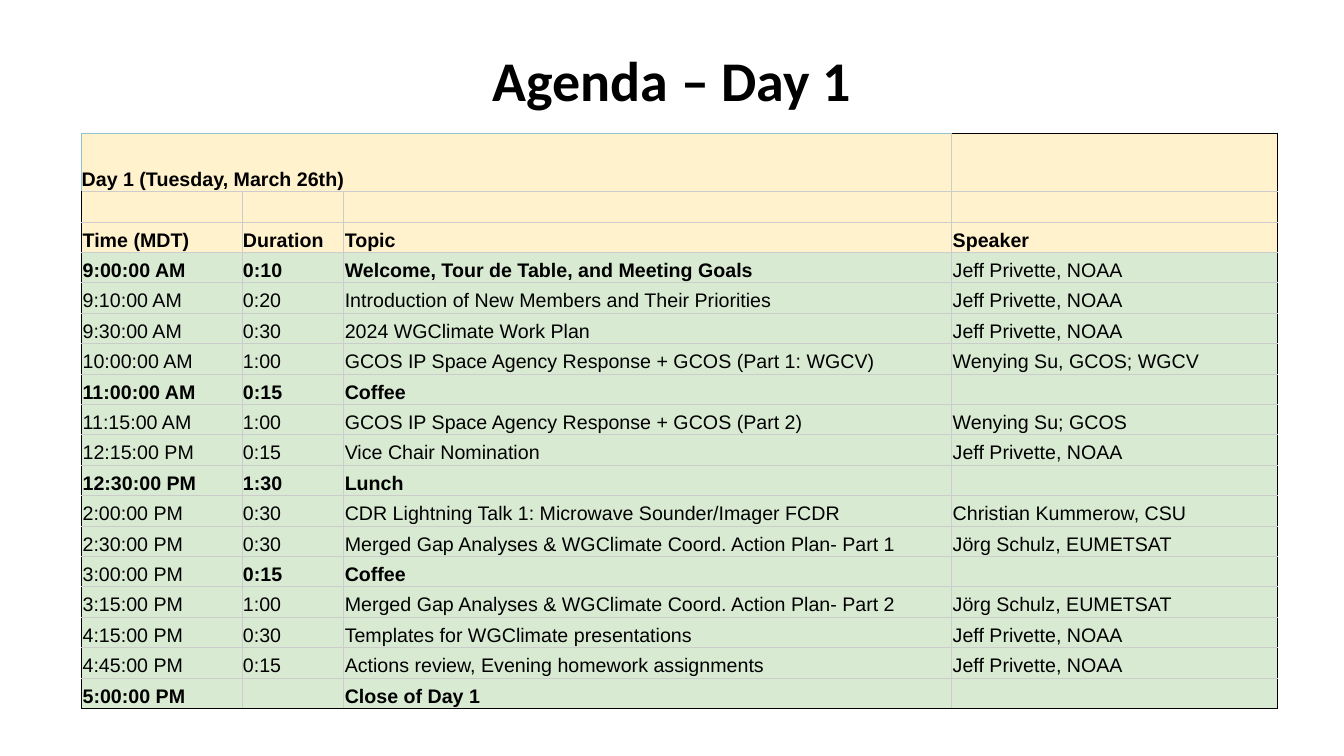
"""Build the Day 1 agenda slide with its timetable."""
from lxml import etree
from pptx import Presentation
from pptx import util as u
from pptx.dml import color
from pptx.enum import text
from pptx.oxml import ns

COLORS = {"ink": "000000", "grid": "CCCCCC", "corner": "90C4CA",
          "heading": "FFF2CC", "session": "D9EAD3"}
COLUMN_WIDTHS = (1.59, 1.01, 6.03, 3.23)
TABLE_HEIGHT, DAY_HEIGHT = 5.71, 0.58
HEADING_ROWS = 3
BOLD_TOPICS = {"Welcome, Tour de Table, and Meeting Goals", "Coffee", "Lunch", "Close of Day 1"}
PLAIN_TIMES = {"3:00:00 PM"}
AGENDA = (
    ("Day 1 (Tuesday, March 26th)", "", "", ""),
    ("", "", "", ""),
    ("Time (MDT)", "Duration", "Topic", "Speaker"),
    ("9:00:00 AM", "0:10", "Welcome, Tour de Table, and Meeting Goals", "Jeff Privette, NOAA"),
    ("9:10:00 AM", "0:20", "Introduction of New Members and Their Priorities", "Jeff Privette, NOAA"),
    ("9:30:00 AM", "0:30", "2024 WGClimate Work Plan", "Jeff Privette, NOAA"),
    ("10:00:00 AM", "1:00", "GCOS IP Space Agency Response + GCOS (Part 1: WGCV)", "Wenying Su, GCOS; WGCV"),
    ("11:00:00 AM", "0:15", "Coffee", ""),
    ("11:15:00 AM", "1:00", "GCOS IP Space Agency Response + GCOS (Part 2)", "Wenying Su; GCOS"),
    ("12:15:00 PM", "0:15", "Vice Chair Nomination", "Jeff Privette, NOAA"),
    ("12:30:00 PM", "1:30", "Lunch", ""),
    ("2:00:00 PM", "0:30", "CDR Lightning Talk 1: Microwave Sounder/Imager FCDR", "Christian Kummerow, CSU"),
    ("2:30:00 PM", "0:30", "Merged Gap Analyses & WGClimate Coord. Action Plan- Part 1", "Jörg Schulz, EUMETSAT"),
    ("3:00:00 PM", "0:15", "Coffee", ""),
    ("3:15:00 PM", "1:00", "Merged Gap Analyses & WGClimate Coord. Action Plan- Part 2", "Jörg Schulz, EUMETSAT"),
    ("4:15:00 PM", "0:30", "Templates for WGClimate presentations", "Jeff Privette, NOAA"),
    ("4:45:00 PM", "0:15", "Actions review, Evening homework assignments", "Jeff Privette, NOAA"),
    ("5:00:00 PM", "", "Close of Day 1", ""),
)


def apply(target, values):
    """Set each attribute in the dict on the target."""
    for name, value in values.items():
        setattr(target, name, value)


def write(para, words, font_name, size, bold):
    """Put one formatted run into a paragraph, or size an empty one."""
    if not words:
        etree.SubElement(para._p, ns.qn("a:endParaRPr"), sz=str(size * 100))
        return
    span = para.add_run()
    span.text = words
    apply(span.font, {"name": font_name, "size": u.Pt(size), "bold": bold})
    span.font.color.rgb = color.RGBColor.from_string(COLORS["ink"])


def add_title(page, words):
    """Place and format the slide title."""
    title = page.shapes.title
    apply(title, {"left": u.Inches(2.11), "top": u.Inches(0.16),
                  "width": u.Inches(9.11), "height": u.Inches(1.25)})
    apply(title.text_frame, {"vertical_anchor": text.MSO_ANCHOR.MIDDLE, "word_wrap": True})
    para = title.text_frame.paragraphs[0]
    para.alignment = text.PP_ALIGN.CENTER
    write(para, words, "Calibri", 40, True)


def set_borders(cell, edges):
    """Draw thin cell borders from a dict of side to colour name."""
    properties = cell._tc.get_or_add_tcPr()
    for side in "LRTB":
        line = etree.SubElement(properties, ns.qn(f"a:ln{side}"), w=str(u.Pt(0.5)))
        fill = etree.SubElement(line, ns.qn("a:solidFill"))
        etree.SubElement(fill, ns.qn("a:srgbClr"), val=COLORS[edges[side]])


def border_colors(row, column):
    """Choose border colours: dark outside, grey inside, tinted on the day cell."""
    in_day = row == 0 and column < 3
    outer = "corner" if in_day else "ink"
    return {"L": outer if column == 0 else "grid",
            "R": "ink" if column == len(COLUMN_WIDTHS) - 1 else "grid",
            "T": outer if row == 0 else "grid",
            "B": "ink" if row == len(AGENDA) - 1 else "grid"}


def is_bold(row, column):
    """Tell whether a cell is a heading or part of a highlighted session."""
    if row < HEADING_ROWS:
        return True
    time, _, topic, _ = AGENDA[row]
    return topic in BOLD_TOPICS and column < 3 and not (column == 0 and time in PLAIN_TIMES)


def format_cell(cell, row, column):
    """Fill, border and write one agenda cell."""
    side = u.Inches(0 if row == 0 else 0.01)
    apply(cell, {"margin_left": side, "margin_right": side,
                 "margin_top": u.Inches(0.01), "margin_bottom": u.Inches(0.01),
                 "vertical_anchor": text.MSO_ANCHOR.BOTTOM})
    set_borders(cell, border_colors(row, column))
    cell.fill.solid()
    fill_name = "heading" if row < HEADING_ROWS else "session"
    cell.fill.fore_color.rgb = color.RGBColor.from_string(COLORS[fill_name])
    write(cell.text_frame.paragraphs[0], AGENDA[row][column], "Arial", 14, is_bold(row, column))


def add_agenda(page):
    """Add the timetable with its merged day heading."""
    frame = page.shapes.add_table(len(AGENDA), len(COLUMN_WIDTHS), u.Inches(0.81), u.Inches(1.32),
                                  u.Inches(sum(COLUMN_WIDTHS)), u.Inches(TABLE_HEIGHT))
    table = frame.table
    apply(table, {"first_row": False, "horz_banding": False})
    for column, width in zip(table.columns, COLUMN_WIDTHS):
        column.width = u.Inches(width)
    row_height = (TABLE_HEIGHT - DAY_HEIGHT) / (len(AGENDA) - 1)
    for row, line in enumerate(table.rows):
        line.height = u.Inches(DAY_HEIGHT if row == 0 else row_height)
        for column, cell in enumerate(line.cells):
            format_cell(cell, row, column)
    table.cell(0, 0).merge(table.cell(0, 2))


def main():
    """Create the deck and save it."""
    deck = Presentation()
    apply(deck, {"slide_width": u.Inches(13.33), "slide_height": u.Inches(7.5)})
    page = deck.slides.add_slide(deck.slide_layouts[5])
    add_title(page, "Agenda – Day 1")
    add_agenda(page)
    deck.save("out.pptx")


if __name__ == "__main__":
    main()
